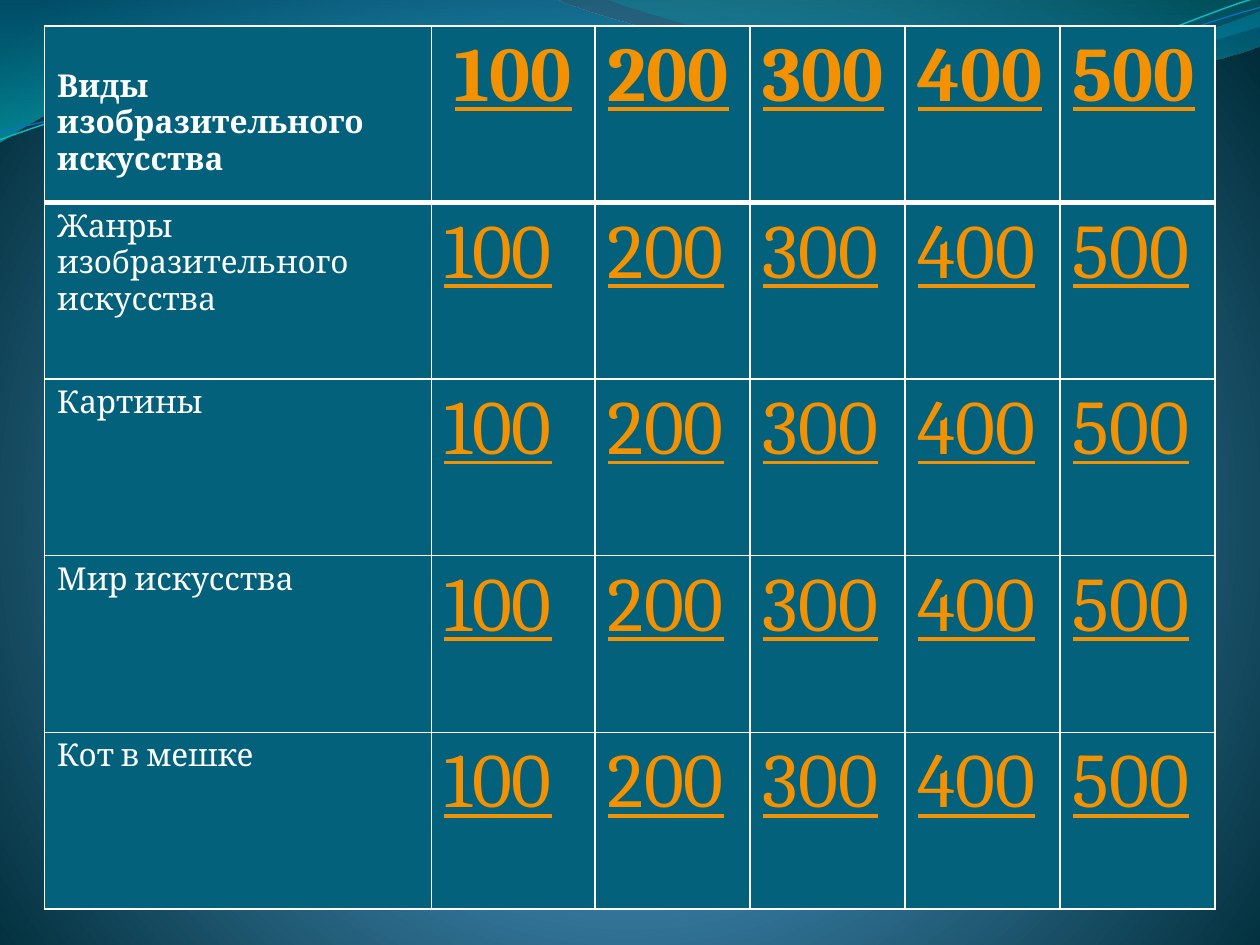
from math import cos, radians, sin

from lxml.etree import SubElement
from pptx import Presentation
from pptx.dml.color import RGBColor
from pptx.enum.text import PP_ALIGN
from pptx.oxml import parse_xml
from pptx.oxml.ns import nsdecls, qn
from pptx.util import Pt

FONT = "Cambria"
WHITE = "FFFFFF"
CELL = "04617B"
LINK = "F49100"
TOPICS = ["Виды изобразительного искусства", "Жанры изобразительного искусства",
          "Картины", "Мир искусства", "Кот в мешке"]
PRICES = ["100", "200", "300", "400", "500"]
COLUMNS = [221.2, 93.4] + [88.6] * 4
ROW_HEIGHT = 100.9
TILT = 2.7

BAND = [(0, 0), (316.8, -0.7),
        (342.7, 12.2, 478.1, 45.4, 545.8, 45.4),
        (614.2, 45.4, 689.8, 18.7, 720, 6.5), (720.7, 25.9),
        (707.8, 31.7, 626.4, 54.7, 537.1, 54),
        (447.8, 54, 275, 20.2, 185, 24.5),
        (92.9, 25.9, 33.1, 59.8, -0.7, 81.4)]
CREST = [(344.9, -0.7), (366.5, 7.9, 491, 44.6, 553.7, 46.8),
         (616.3, 49.7, 691.9, 23, 720, 15.1), (720, 0)]
UPPER_WAVE = [(0, 79.9), (34.6, 67, 113.8, 41, 199.4, 37.4),
              (284.4, 33.8, 427, 64.1, 513.4, 57.6),
              (599.8, 51.1, 675.4, 10.8, 718.6, -1.4)]
LOWER_WAVE = [(0, 74.9), (33.8, 69.1, 118.1, 43.9, 203.8, 40.3),
              (290.2, 36.7, 429.8, 60.5, 516.2, 54),
              (601.9, 48.2, 677.5, 15.1, 720, 4.3)]


def rgb(color):
    """Turn a hex string into a colour."""
    return RGBColor.from_string(color)


def set_gradient(fill, owner, stops, direction):
    """Give a fill a gradient of (position, colour, opacity) stops."""
    fill.solid()
    marks = "".join(
        f'<a:gs pos="{pos * 1000}"><a:srgbClr val="{color}">'
        f'<a:alpha val="{alpha * 1000}"/></a:srgbClr></a:gs>'
        for pos, color, alpha in stops)
    grad = parse_xml(f'<a:gradFill {nsdecls("a")} rotWithShape="1">'
                     f'<a:gsLst>{marks}</a:gsLst>{direction}</a:gradFill>')
    solid = owner.xpath(".//a:solidFill")[0]
    solid.getparent().replace(solid, grad)


def pairs(step):
    """Split a step into its points."""
    return list(zip(step[::2], step[1::2]))


def turn(step, angle, cx=360, cy=41.4):
    """Rotate the points of a step about a centre."""
    c, n = cos(radians(angle)), sin(radians(angle))
    turned = [(cx + (x - cx) * c - (y - cy) * n, cy + (x - cx) * n + (y - cy) * c)
              for x, y in pairs(step)]
    return tuple(value for point in turned for value in point)


def add_outline(s, steps, close):
    """Add a freeform of lines and cubic curves, without fill, line or shadow."""
    points = [(Pt(x), Pt(y)) for step in steps for x, y in pairs(step)]
    builder = s.shapes.build_freeform(*points[0])
    builder.add_line_segments(points[1:], close=close)
    sp = builder.convert_to_shape()
    lines = iter(sp.element.xpath(".//a:path/a:lnTo"))
    for step in steps[1:]:
        first = next(lines)
        if len(step) == 6:
            first.tag = qn("a:cubicBezTo")
            for _ in range(2):
                extra = next(lines)
                first.append(extra[0])
                extra.getparent().remove(extra)
    sp.shadow.inherit = False
    sp.fill.background()
    sp.line.fill.background()
    return sp


def add_band(s, steps, stops):
    """Add a closed translucent band with a vertical gradient."""
    sp = add_outline(s, steps, True)
    set_gradient(sp.fill, sp.element.spPr, stops, '<a:lin ang="5400000" scaled="1"/>')


def add_wave(s, steps, color, width):
    """Add an open curved line on a tilted frame."""
    sp = add_outline(s, [turn(step, TILT) for step in steps], False)
    sp.rotation = -TILT
    sp.line.color.rgb = rgb(color)
    sp.line.width = Pt(width)


def set_borders(cell, widths):
    """Draw white borders on the sides of a cell."""
    tcPr = cell._tc.get_or_add_tcPr()
    for i, (side, width) in enumerate(widths.items()):
        ln = SubElement(tcPr, qn(f"a:ln{side}"), w=str(Pt(width)))
        fill = SubElement(ln, qn("a:solidFill"))
        SubElement(fill, qn("a:srgbClr"), val=WHITE)
        tcPr.insert(i, ln)


def fill_cell(cell, text, size, color, bold, underline):
    """Write one run into a coloured cell."""
    cell.fill.solid()
    cell.fill.fore_color.rgb = rgb(CELL)
    p = cell.text_frame.paragraphs[0]
    r = p.add_run()
    r.text = text
    r.font.name = FONT
    r.font.size = Pt(size)
    r.font.bold = bold
    r.font.underline = underline
    r.font.color.rgb = rgb(color)


def add_board(s):
    """Add the table of topics and prices."""
    frame = s.shapes.add_table(len(TOPICS), len(COLUMNS), Pt(25.5), Pt(14.9),
                               Pt(sum(COLUMNS)), Pt(ROW_HEIGHT * len(TOPICS)))
    table = frame.table
    for column, width in zip(table.columns, COLUMNS):
        column.width = Pt(width)
    for i, topic in enumerate(TOPICS):
        table.rows[i].height = Pt(ROW_HEIGHT)
        top = i == 0
        for j, text in enumerate([topic] + PRICES):
            cell = table.cell(i, j)
            size, color = (44, LINK) if j else (18, WHITE)
            fill_cell(cell, text, size, color, top, j > 0)
            set_borders(cell, {"L": 1, "R": 1, "T": 3 if i == 1 else 1, "B": 3 if top else 1})
    table.cell(0, 0).margin_top = Pt(24.6)
    table.cell(0, 1).text_frame.paragraphs[0].alignment = PP_ALIGN.CENTER


def main():
    """Build the slide and save it."""
    prs = Presentation()
    prs.slide_width, prs.slide_height = Pt(720), Pt(540)
    s = prs.slides.add_slide(prs.slide_layouts[6])
    set_gradient(s.background.fill, s.element,
                 [(0, "4AA0D6", 100), (25, "4C98C7", 100), (100, "002C38", 100)],
                 '<a:path path="circle"><a:fillToRect l="10000" t="110000" '
                 'r="10000" b="100000"/></a:path>')
    add_band(s, BAND, [(0, "0074A1", 45), (100, "00C6CF", 55)])
    add_band(s, CREST, [(0, "00A1A9", 30), (80, "008BBF", 45)])
    add_wave(s, UPPER_WAVE, "0AB8BF", 0.85)
    add_wave(s, LOWER_WAVE, "0F6FC6", 0.75)
    add_board(s)
    prs.save("out.pptx")


if __name__ == "__main__":
    main()
